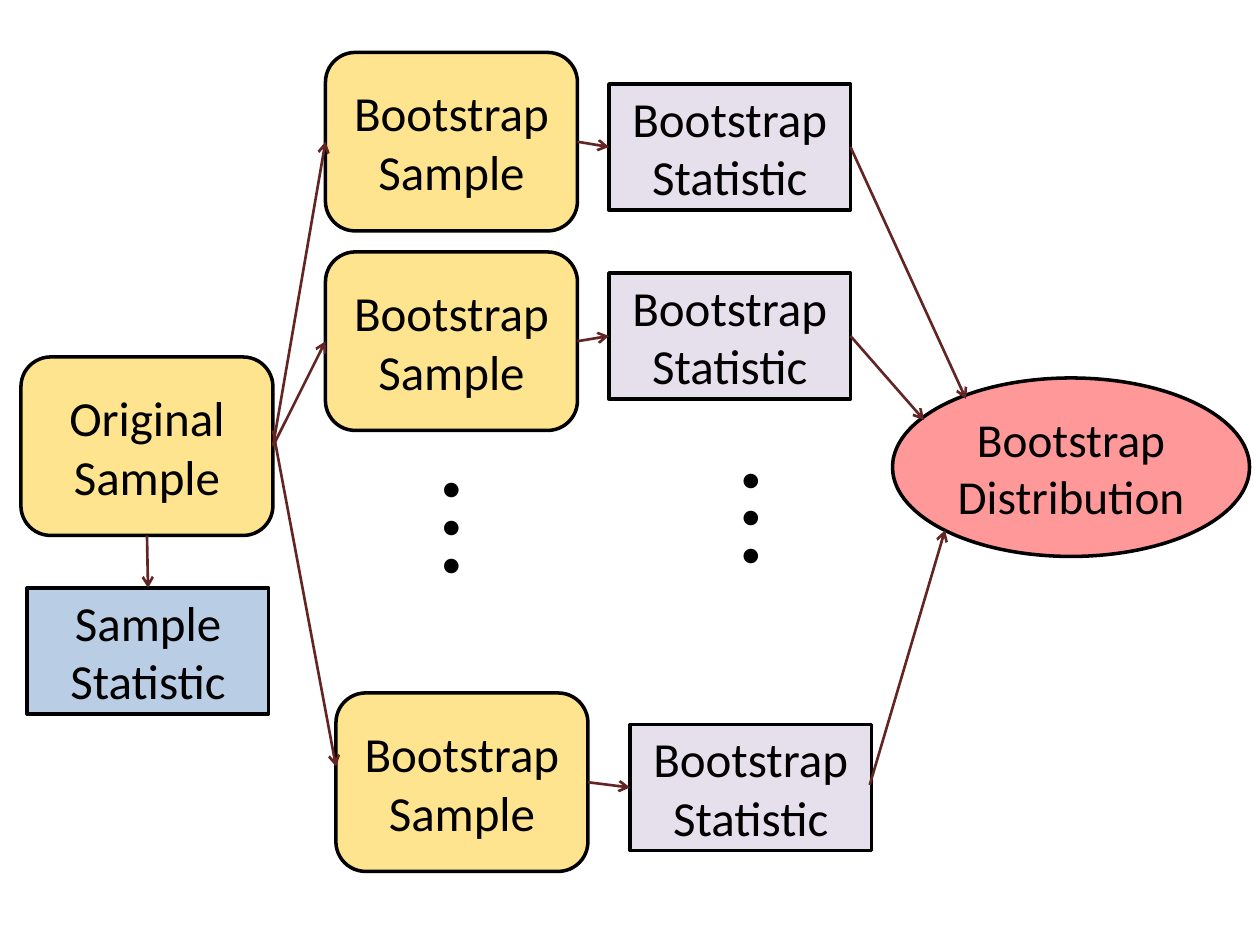
from lxml import etree
from pptx import Presentation
from pptx.dml.color import RGBColor
from pptx.enum import shapes, text
from pptx.oxml import ns
from pptx.util import Pt

TOP, LEFT, BOTTOM, RIGHT = range(4)
SAMPLE_SIZE = (144, 102)
STATISTIC_SIZE = (138, 72)


def color(value):
    return RGBColor.from_string(value)


class Diagram:
    font = "Calibri"
    ink = "000000"
    arrow_color = "632523"
    sample_fill = "FFE48F"
    statistic_fill = "E6E0EC"

    def __init__(self, slide):
        self.slide = slide

    def format_text(self, frame, size):
        for paragraph in frame.paragraphs:
            paragraph.alignment = text.PP_ALIGN.CENTER
            for run in paragraph.runs:
                run.font.name = self.font
                run.font.size = Pt(size)
                run.font.color.rgb = color(self.ink)

    def node(self, kind, label, position, size, fill, font_size=28):
        shape = self.slide.shapes.add_shape(kind, *map(Pt, position + size))
        shape.shadow.inherit = False
        shape.fill.solid()
        shape.fill.fore_color.rgb = color(fill)
        shape.line.color.rgb = color(self.ink)
        shape.line.width = Pt(2)
        frame = shape.text_frame
        frame.word_wrap = True
        frame.vertical_anchor = text.MSO_ANCHOR.MIDDLE
        frame.text = label
        self.format_text(frame, font_size)
        return shape

    def sample(self, label, position):
        return self.node(shapes.MSO_SHAPE.ROUNDED_RECTANGLE, label, position,
                         SAMPLE_SIZE, self.sample_fill)

    def statistic(self, label, position, fill=statistic_fill):
        return self.node(shapes.MSO_SHAPE.RECTANGLE, label, position, STATISTIC_SIZE, fill)

    def distribution(self, label, position, size):
        shape = self.node(shapes.MSO_SHAPE.OVAL, label, position, size, "FF9999", 27)
        frame = shape.text_frame
        frame.margin_left = frame.margin_right = 0
        frame.margin_top = frame.margin_bottom = 0
        return shape

    def dots(self, position):
        box = self.slide.shapes.add_textbox(*map(Pt, position + (90, 94)))
        frame = box.text_frame
        frame.word_wrap = True
        frame.auto_size = text.MSO_AUTO_SIZE.SHAPE_TO_FIT_TEXT
        frame.text = "\n".join("●" * 3)
        self.format_text(frame, 18)

    def arrow(self, start=(0, 0), end=(0, 0)):
        connector = self.slide.shapes.add_connector(
            shapes.MSO_CONNECTOR.STRAIGHT, *map(Pt, start + end))
        connector.line.color.rgb = color(self.arrow_color)
        connector.line.width = Pt(1.5)
        line = connector.line._get_or_add_ln()
        etree.SubElement(line, ns.qn("a:tailEnd"), type="arrow")
        etree.SubElement(connector._element.spPr, ns.qn("a:effectLst"))
        return connector

    def link(self, source, source_side, target, target_side):
        connector = self.arrow()
        connector.begin_connect(source, source_side)
        connector.end_connect(target, target_side)


def main():
    presentation = Presentation()
    presentation.slide_width, presentation.slide_height = Pt(720), Pt(540)
    diagram = Diagram(presentation.slides.add_slide(presentation.slide_layouts[6]))

    original = diagram.sample("Original Sample", (12, 204))
    sample_statistic = diagram.statistic("Sample Statistic", (15.6, 336), "B9CDE5")
    diagram.link(original, BOTTOM, sample_statistic, TOP)

    rows = [((186, 30), (348, 48)), ((186, 144), (348, 156)), ((192, 396), (360, 414))]
    samples = []
    for sample_position, statistic_position in rows:
        sample = diagram.sample("Bootstrap\vSample", sample_position)
        statistic = diagram.statistic("Bootstrap Statistic", statistic_position)
        diagram.link(sample, RIGHT, statistic, LEFT)
        samples.append(sample)

    for sample in samples[:2]:
        diagram.link(original, RIGHT, sample, LEFT)
    diagram.arrow((156, 246), (192, 438))

    diagram.dots((213, 264))
    diagram.dots((384, 258.5))

    diagram.distribution("Bootstrap Distribution", (510, 216), (204, 102))
    diagram.arrow((486, 84), (552, 228))
    diagram.arrow((486, 192), (528, 240))
    diagram.arrow((497, 448.5), (540, 303))

    presentation.save("out.pptx")


if __name__ == "__main__":
    main()
